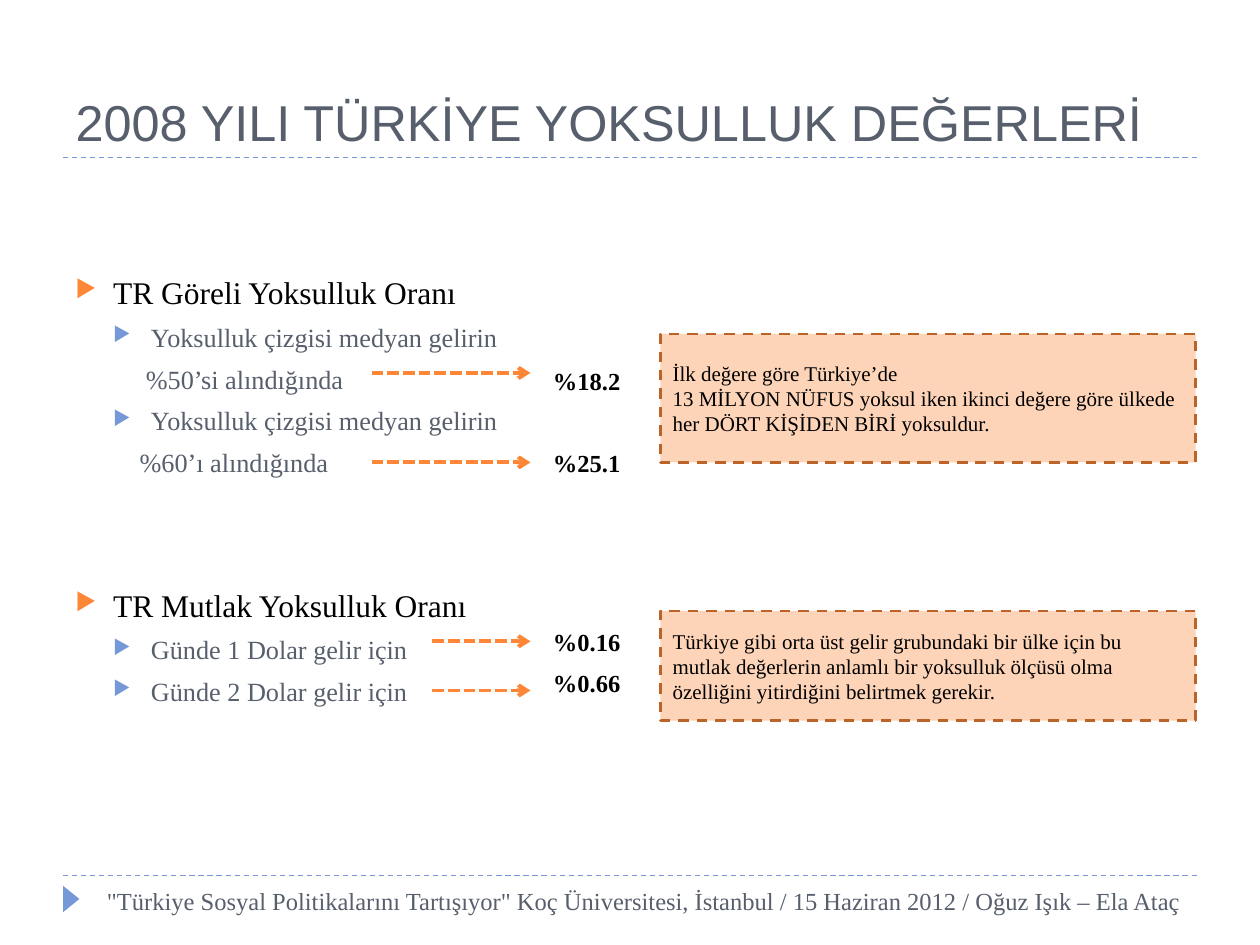
from pptx import Presentation
from pptx.dml.color import RGBColor
from pptx.enum.dml import MSO_LINE
from pptx.enum.shapes import MSO_CONNECTOR, MSO_SHAPE
from pptx.enum.text import MSO_ANCHOR, PP_ALIGN
from pptx.oxml.ns import qn
from pptx.util import Inches, Pt
from lxml import etree

STRAIGHT = MSO_CONNECTOR.STRAIGHT
RECTANGLE, TRIANGLE = MSO_SHAPE.RECTANGLE, MSO_SHAPE.ISOSCELES_TRIANGLE
DASH, SHORT_DASH = MSO_LINE.DASH, MSO_LINE.SQUARE_DOT
TOP, MIDDLE, BOTTOM = MSO_ANCHOR.TOP, MSO_ANCHOR.MIDDLE, MSO_ANCHOR.BOTTOM
LEFT = PP_ALIGN.LEFT
TITLE_ONLY = 5

SERIF, SANS = "Times New Roman", "Arial"
BLACK, SLATE = "000000", "575F6D"
BLUE, ORANGE, BROWN = "7598D9", "FE8637", "BC6329"


def color(hex_string):
    """Turn a hex string into a colour."""
    return RGBColor.from_string(hex_string)


def add_child(parent, tag, **attributes):
    """Append a drawing element to a parent element."""
    return etree.SubElement(parent, qn(tag), attributes)


class SlideBuilder:
    """Hold the current slide and draw its elements in one style."""

    def __init__(self, presentation):
        """Add a title-only slide."""
        self.slide = presentation.slides.add_slide(presentation.slide_layouts[TITLE_ONLY])
        self.shapes = self.slide.shapes

    def place(self, shape, left, top, width, height):
        """Move and size a shape."""
        shape.left, shape.top = Inches(left), Inches(top)
        shape.width, shape.height = Inches(width), Inches(height)

    def format_paragraph(self, paragraph, size, hex_string, font=SERIF, bold=False):
        """Align a paragraph left and format its runs."""
        paragraph.alignment = LEFT
        for run in paragraph.runs:
            run.font.name, run.font.size, run.font.bold = font, Pt(size), bold
            run.font.color.rgb = color(hex_string)

    def set_text(self, shape, text, size, hex_string, font=SERIF, bold=False, anchor=TOP):
        """Fill a shape with text in one format."""
        frame = shape.text_frame
        frame.word_wrap, frame.vertical_anchor = True, anchor
        frame.text = text
        for paragraph in frame.paragraphs:
            self.format_paragraph(paragraph, size, hex_string, font, bold)

    def title(self, text, *box):
        """Set the slide title."""
        shape = self.shapes.title
        self.place(shape, *box)
        self.set_text(shape, text, 28.8, SLATE, SANS, anchor=BOTTOM)

    def text(self, text, *box, size=14, hex_string=BLACK, bold=False):
        """Add a text box."""
        shape = self.shapes.add_textbox(*map(Inches, box))
        self.set_text(shape, text, size, hex_string, bold=bold)

    def bullet_list(self, items, *box):
        """Add a list of (text, size, colour, bullet colour, indent, space before)."""
        frame = self.shapes.add_textbox(*map(Inches, box)).text_frame
        frame.word_wrap = True
        frame.text = "\n".join(item[0] for item in items)
        for paragraph, item in zip(frame.paragraphs, items):
            _, size, hex_string, bullet_color, indent, space = item
            self.format_paragraph(paragraph, size, hex_string)
            paragraph.space_before = Pt(space)
            properties = paragraph._p.get_or_add_pPr()
            properties.set("marL", str(Inches(indent)))
            if bullet_color:
                properties.set("indent", str(Inches(-0.3)))
                add_child(add_child(properties, "a:buClr"), "a:srgbClr", val=bullet_color)
                add_child(properties, "a:buSzPct", val="76000")
                add_child(properties, "a:buChar", char="▶")

    def line(self, left, right, top, hex_string, width, dash, arrow=False):
        """Add a horizontal dashed line, with an arrowhead if asked."""
        connector = self.shapes.add_connector(
            STRAIGHT, Inches(left), Inches(top), Inches(right), Inches(top))
        connector.line.color.rgb = color(hex_string)
        connector.line.width = Pt(width)
        connector.line.dash_style = dash
        properties = connector.element.spPr
        if arrow:
            add_child(properties.find(qn("a:ln")), "a:tailEnd", type="arrow")
        add_child(properties, "a:effectLst")

    def shape(self, kind, hex_string, *box):
        """Add a filled shape without shadow or outline."""
        shape = self.shapes.add_shape(kind, *map(Inches, box))
        shape.shadow.inherit = False
        shape.fill.solid()
        shape.fill.fore_color.rgb = color(hex_string)
        shape.line.fill.background()
        return shape

    def note(self, text, *box):
        """Add a translucent comment box with a dashed outline."""
        shape = self.shape(RECTANGLE, ORANGE, *box)
        fill = shape.element.spPr.find(qn("a:solidFill"))
        add_child(fill.find(qn("a:srgbClr")), "a:alpha", val="35000")
        shape.line.color.rgb = color(BROWN)
        shape.line.width = Pt(1.5)
        shape.line.dash_style = DASH
        self.set_text(shape, text, 12, BLACK, anchor=MIDDLE)


def heading(text, space):
    """Describe a first-level list item."""
    return text, 18, BLACK, ORANGE, 0.3, space


def detail(text, bullet_color=BLUE, indent=0.6):
    """Describe a second-level list item."""
    return text, 15, SLATE, bullet_color, indent, 5.85


def main():
    """Build and save the presentation."""
    presentation = Presentation()
    presentation.slide_width, presentation.slide_height = Inches(10), Inches(7.5)
    builder = SlideBuilder(presentation)

    for top in (6.95, 1.25):
        builder.line(0.5, 9.5, top, BLUE, 0.75, DASH)
    builder.shape(TRIANGLE, BLUE, 0.46, 7.07, 0.21, 0.13).rotation = 90
    builder.title("2008 YILI TÜRKİYE YOKSULLUK DEĞERLERİ", 0.5, 0.17, 9, 1.08)

    builder.bullet_list([
        heading("TR Göreli Yoksulluk Oranı", 0),
        detail("Yoksulluk çizgisi medyan gelirin"),
        detail("%50’si alındığında", None, 0.56),
        detail("Yoksulluk çizgisi medyan gelirin"),
        detail("%60’ı alındığında", None, 0.51),
        heading("TR Mutlak Yoksulluk Oranı", 61.5),
        detail("Günde 1 Dolar gelir için"),
        detail("Günde 2 Dolar gelir için"),
    ], 0.5, 2.12, 4.5, 3.6)

    builder.text(
        '"Türkiye Sosyal Politikalarını Tartışıyor" Koç Üniversitesi, İstanbul'
        " / 15 Haziran 2012 / Oğuz Işık – Ela Ataç",
        0.75, 6.98, 8.82, 0.4, hex_string=SLATE)

    builder.note(
        "İlk değere göre Türkiye’de\n13 MİLYON NÜFUS yoksul iken ikinci değere"
        " göre ülkede her DÖRT KİŞİDEN BİRİ yoksuldur.",
        5.24, 2.65, 4.25, 1.02)
    builder.note(
        "Türkiye gibi orta üst gelir grubundaki bir ülke için bu mutlak değerlerin"
        " anlamlı bir yoksulluk ölçüsü olma özelliğini yitirdiğini belirtmek gerekir.",
        5.24, 4.85, 4.25, 0.87)

    rates = [
        ("%18.2", 2.86, 2.95, 2.96),
        ("%25.1", 3.51, 2.95, 3.67),
        ("%0.16", 4.93, 3.43, 5.09),
        ("%0.66", 5.25, 3.43, 5.48),
    ]
    for rate, top, arrow_left, arrow_top in rates:
        builder.text(rate, 4.29, top, 0.87, 0.34, bold=True)
        builder.line(arrow_left, 4.21, arrow_top, ORANGE, 2.25, SHORT_DASH, arrow=True)

    presentation.save("out.pptx")


if __name__ == "__main__":
    main()
